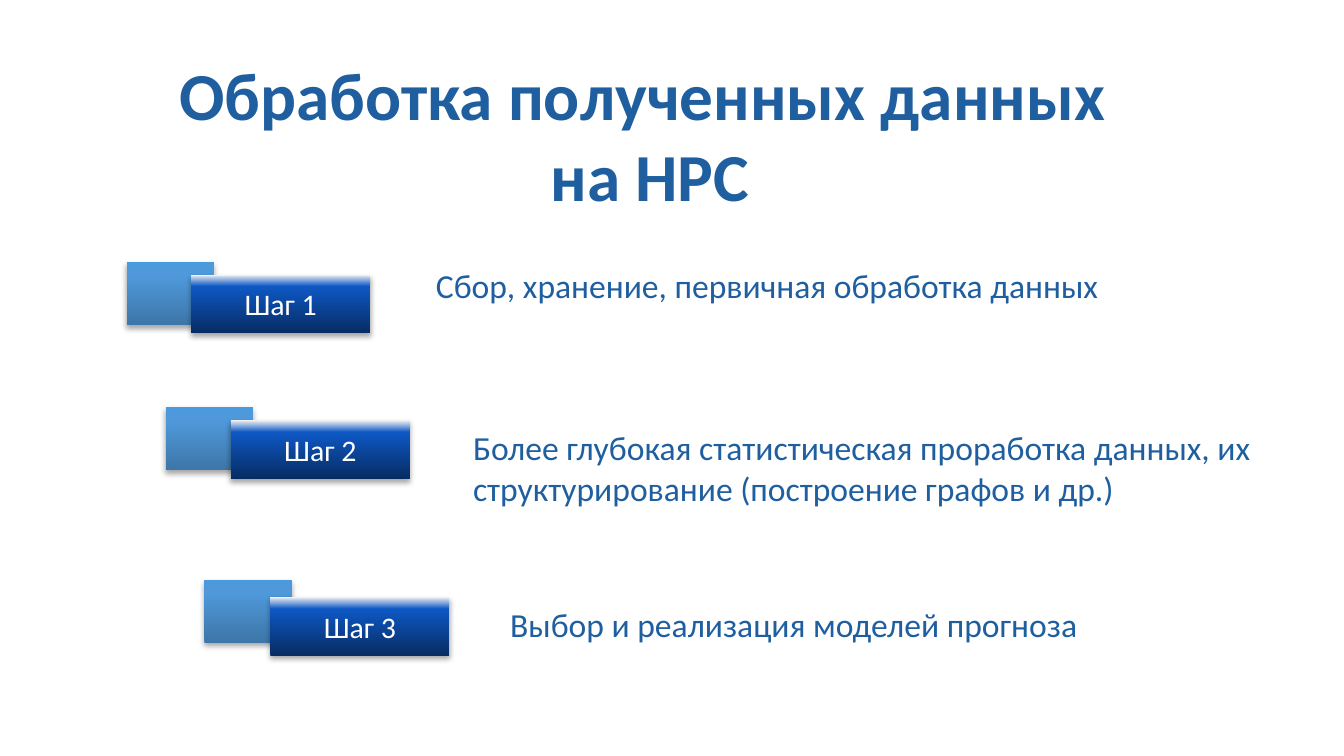
from lxml import etree
from pptx import Presentation
from pptx.dml.color import RGBColor
from pptx.enum import shapes, text
from pptx.oxml import parse_xml
from pptx.oxml.ns import qn
from pptx.util import Pt

NS = 'xmlns:a="http://schemas.openxmlformats.org/drawingml/2006/main"'
BLUE = "1F5FA0"


def style_text(para, size, colour, bold=False):
    for span in para.runs:
        span.font.name = "Calibri"
        span.font.size = Pt(size)
        span.font.bold = bold
        span.font.color.rgb = RGBColor.from_string(colour)


def add_block(left, top, width, height, colours):
    """Rectangle with a bottom-to-top gradient and a soft shadow."""
    box = page.shapes.add_shape(shapes.MSO_SHAPE.RECTANGLE, Pt(left), Pt(top), Pt(width), Pt(height))
    box.line.fill.background()
    box.shadow.inherit = False
    stops = "".join(f'<a:gs pos="{pos}"><a:srgbClr val="{colour}"/></a:gs>'
                    for pos, colour in zip((0, 80000, 100000), colours))
    props = box.element.spPr
    props.find(qn("a:prstGeom")).addnext(parse_xml(
        f'<a:gradFill {NS} rotWithShape="1"><a:gsLst>{stops}</a:gsLst>'
        '<a:lin ang="16200000" scaled="0"/></a:gradFill>'))
    props.find(qn("a:effectLst")).append(parse_xml(
        f'<a:outerShdw {NS} blurRad="{Pt(3.1)}" dist="{Pt(1.8)}" dir="5400000" rotWithShape="0">'
        '<a:srgbClr val="000000"><a:alpha val="35000"/></a:srgbClr></a:outerShdw>'))
    return box


deck = Presentation()
deck.slide_width, deck.slide_height = Pt(720), Pt(405)
# The comparison layout offers a title and four body placeholders
page = deck.slides.add_slide(deck.slide_layouts[4])

# Title
title = page.shapes.title
title.left, title.top, title.width, title.height = Pt(48.2), Pt(34.6), Pt(600), Pt(84.2)
frame = title.text_frame
frame.text = "Обработка полученных данных \vна HPC"
frame.auto_size = text.MSO_AUTO_SIZE.NONE
frame.vertical_anchor = text.MSO_ANCHOR.BOTTOM
frame.paragraphs[0].alignment = text.PP_ALIGN.CENTER
style_text(frame.paragraphs[0], 36, BLUE, bold=True)

# Steps: tops of rear block, label and description
steps = [
    (140.6, 147.1, 138.2, "Сбор, хранение, первичная обработка данных"),
    (218.3, 225.2, 225.2, "Более глубокая статистическая проработка данных, "
                          "их структурирование (построение графов и др.)"),
    (310.5, 319.9, 319.9, "Выбор и реализация моделей прогноза"),
]
bodies = [box for box in page.placeholders if box.placeholder_format.idx in (1, 2, 3, 4)]
for step, (rear_top, label_top, body_top, wording) in enumerate(steps):
    # Rear block and step label, each step further to the right
    add_block(67.9 + 20.8 * step, rear_top, 46.8, 33.8, ("3D76A8", "4F99DB", "4C9ADE"))
    label = add_block(102.4 + 21.2 * step, label_top, 96, 31.5, ("072C62", "0E58C4", "F2F2F2"))
    label.text_frame.text = f"Шаг {step + 1}"
    label.text_frame.vertical_anchor = text.MSO_ANCHOR.MIDDLE
    para = label.text_frame.paragraphs[0]
    para.alignment = text.PP_ALIGN.CENTER
    style_text(para, 16, "FFFFFF")

    # Description reaching to the right edge of the slide
    body, left = bodies[step], 221.8 + 19.9 * step
    body.left, body.top, body.width, body.height = Pt(left), Pt(body_top), Pt(720 - left), Pt(49.7)
    frame = body.text_frame
    frame.text = wording
    frame.auto_size = text.MSO_AUTO_SIZE.NONE
    frame.vertical_anchor = text.MSO_ANCHOR.TOP
    para = frame.paragraphs[0]
    para.space_before = Pt(0)
    indent = para._p.get_or_add_pPr()
    indent.set("marL", str(Pt(4.5)))
    indent.set("indent", "0")
    etree.SubElement(indent, qn("a:buNone"))
    style_text(para, 18, BLUE)

# Remove the unused placeholder
spare = bodies[3].element
spare.getparent().remove(spare)

deck.save("out.pptx")
